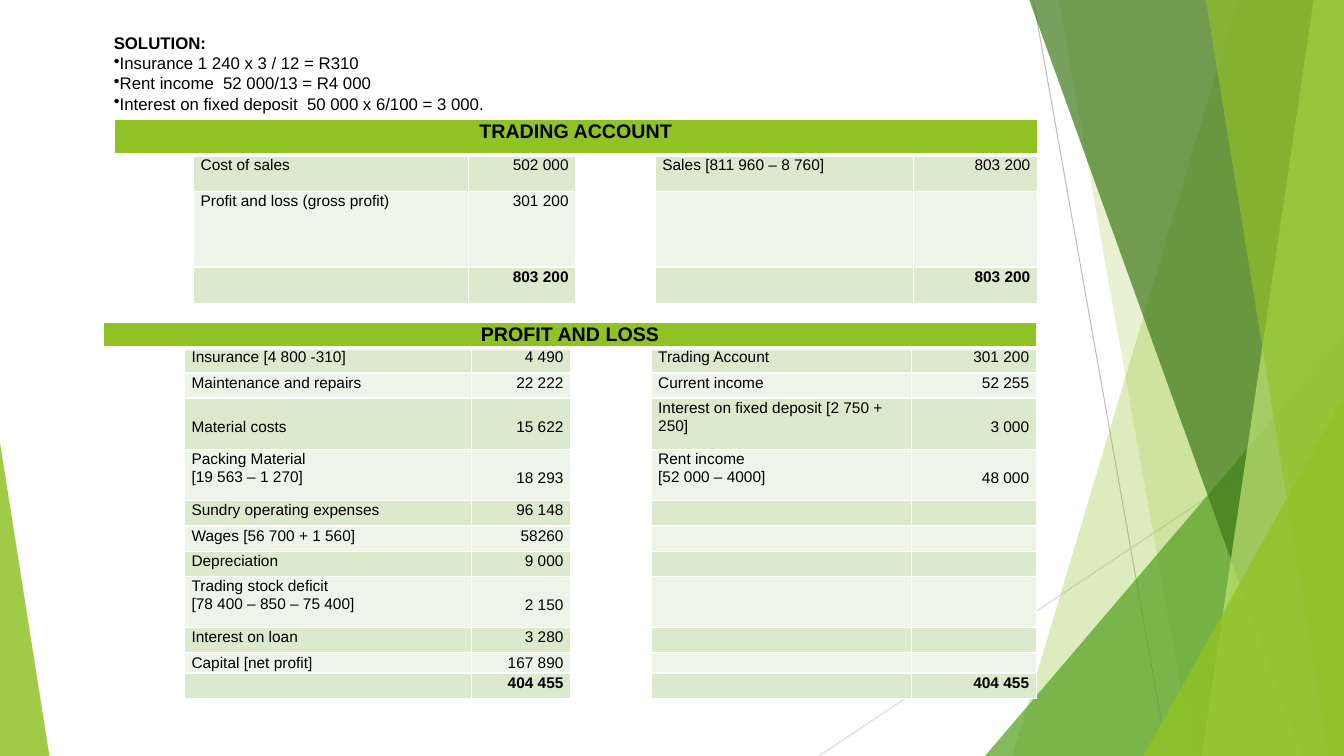
import pptx
import pptx.util
import pptx.dml.color
import pptx.enum.shapes
import pptx.enum.text
import pptx.oxml
import pptx.oxml.ns

WIDTH, HEIGHT = pptx.util.Inches(13.33), pptx.util.Inches(7.5)
FONT = "Arial"
COLOURS = {
    "text": "000000", "border": "FFFFFF", "header": "90C226",
    "band": "DBE9CD", "pale band": "EEF4E8",
    "grey": "BFBFBF", "light grey": "D9D9D9",
    "lime": "90C226", "green": "54A021", "forest": "3F7819", "light lime": "C0E474",
}
LINE = 3.33      # height of a one-line row, percent of the slide
DOUBLE = 6.8     # height of a two-line row
LINE_DROP = pptx.util.Pt(13.5)

NOTES = ["Insurance 1 240 x 3 / 12 = R310",
         "Rent income  52 000/13 = R4 000",
         "Interest on fixed deposit  50 000 x 6/100 = 3 000."]

# Each entry: row height, debit item, debit amount, credit item, credit amount
TRADING = [
    (4.8, "Cost of sales", "502 000", "Sales [811 960 – 8 760]", "803 200"),
    (10, "Profit and loss (gross profit)", "301 200", "", ""),
    (4.8, "", "803 200", "", "803 200"),
]
PROFIT_AND_LOSS = [
    (LINE, "Insurance [4 800 -310]", "4 490", "Trading Account", "301 200"),
    (LINE, "Maintenance and repairs", "22 222", "Current income", "52 255"),
    (DOUBLE, "Material costs", "15 622", "Interest on fixed deposit [2 750 + 250]", "3 000"),
    (DOUBLE, "Packing Material\n[19 563 – 1 270]", "18 293",
     "Rent income\n[52 000 – 4000]", "48 000"),
    (LINE, "Sundry operating expenses", "96 148", "", ""),
    (LINE, "Wages [56 700 + 1 560]", "58260", "", ""),
    (LINE, "Depreciation", "9 000", "", ""),
    (DOUBLE, "Trading stock deficit\n[78 400 – 850 – 75 400]", "2 150", "", ""),
    (LINE, "Interest on loan", "3 280", "", ""),
    (2.67, "Capital [net profit]", "167 890", "", ""),
    (LINE, "", "404 455", "", "404 455"),
]


def across(percent):
    return round(WIDTH * percent / 100)


def down(percent):
    return round(HEIGHT * percent / 100)


def colour(name):
    return pptx.dml.color.RGBColor.from_string(COLOURS[name])


def add_child(parent, tag, **attributes):
    child = pptx.oxml.ns.qn(tag)
    element = parent.makeelement(child, attributes)
    parent.append(element)
    return element


def paint(shape, name, opacity):
    shape.shadow.inherit = False
    shape.line.fill.background()
    shape.fill.solid()
    shape.fill.fore_color.rgb = colour(name)
    tint = shape.fill._xPr.find(".//" + pptx.oxml.ns.qn("a:srgbClr"))
    add_child(tint, "a:alpha", val=str(opacity * 1000))


def add_hairline(slide, start, end, name):
    line = slide.shapes.add_connector(
        pptx.enum.shapes.MSO_CONNECTOR.STRAIGHT,
        across(start[0]), down(start[1]), across(end[0]), down(end[1]))
    line.line.color.rgb = colour(name)
    line.line.width = pptx.util.Pt(0.75)
    add_child(line._element.spPr, "a:effectLst")


def add_facet(slide, top, bottom, name, opacity):
    """Fill from a slanted left edge to the right side of the slide."""
    builder = slide.shapes.build_freeform(across(top), 0)
    builder.add_line_segments([(WIDTH, 0), (WIDTH, HEIGHT), (across(bottom), HEIGHT)])
    paint(builder.convert_to_shape(), name, opacity)


def add_corner(slide, left, top, width, peak, name, opacity):
    """Triangle standing on the bottom edge of the slide."""
    triangle = slide.shapes.add_shape(
        pptx.enum.shapes.MSO_SHAPE.ISOSCELES_TRIANGLE,
        across(left), down(top), across(width), down(100 - top))
    triangle.adjustments[0] = peak
    paint(triangle, name, opacity)


def style_paragraph(paragraph, size, bold):
    paragraph.font.name = FONT
    paragraph.font.size = pptx.util.Pt(size)
    paragraph.font.bold = bold
    paragraph.font.color.rgb = colour("text")


def add_border(cell, side, points):
    border = add_child(cell._tc.get_or_add_tcPr(), "a:ln" + side,
                       w=str(pptx.util.Pt(points)))
    add_child(add_child(border, "a:solidFill"), "a:srgbClr", val=COLOURS["border"])


def fill_cell(cell, text, fill, align, size=11, bold=False, drop=0, underline=1):
    cell.margin_left = cell.margin_right = pptx.util.Inches(0.07)
    cell.margin_top, cell.margin_bottom = drop, 0
    for side in "LRT":
        add_border(cell, side, 1)
    add_border(cell, "B", underline)
    if fill:
        cell.fill.solid()
        cell.fill.fore_color.rgb = colour(fill)
    else:
        cell.fill.background()
    cell.text = text
    for paragraph in cell.text_frame.paragraphs:
        paragraph.alignment = align
        paragraph.line_spacing = 1.07
        style_paragraph(paragraph, size, bold)
        if not text:
            add_child(paragraph._p, "a:endParaRPr", sz=str(size * 100))


def add_account(slide, title, left, top, columns, header_height, entries):
    alignment = pptx.enum.text.PP_ALIGN
    heights = [header_height] + [entry[0] for entry in entries]
    table = slide.shapes.add_table(
        len(heights), len(columns), across(left), down(top),
        across(sum(columns)), down(sum(heights))).table
    table.first_row = table.horz_banding = False
    for column, width in zip(table.columns, columns):
        column.width = across(width)
    for row, height in zip(table.rows, heights):
        row.height = down(height)

    header = table.cell(0, 0)
    header.merge(table.cell(0, len(columns) - 1))
    fill_cell(header, title, "header", alignment.CENTER, 14, True, underline=3)

    for row, (height, debit, paid, credit, received) in enumerate(entries, 1):
        band = "band" if row % 2 else "pale band"
        total = row == len(entries)
        for column, text in enumerate(["", debit, paid, "", credit, received]):
            is_gap, is_amount = column % 3 == 0, column % 3 == 2
            lowered = height == DOUBLE and (is_amount or text == "Material costs")
            fill_cell(table.cell(row, column), text, None if is_gap else band,
                      alignment.RIGHT if is_amount else alignment.LEFT,
                      bold=total, drop=LINE_DROP if lowered else 0)


def add_solution(slide):
    box = slide.shapes.add_textbox(across(7.73), down(3.6), across(67.37), down(12.13))
    frame = box.text_frame
    frame.word_wrap = True
    frame.vertical_anchor = pptx.enum.text.MSO_ANCHOR.MIDDLE
    frame.text = "\n".join(["SOLUTION:"] + NOTES)
    for index, paragraph in enumerate(frame.paragraphs):
        style_paragraph(paragraph, 12, index == 0)
        if index:
            properties = paragraph._p.get_or_add_pPr()
            properties.set("marL", "0")
            properties.set("indent", "0")
            bullet = properties.makeelement(pptx.oxml.ns.qn("a:buChar"), {"char": "•"})
            properties.insert(0, bullet)


def add_backdrop(slide):
    add_hairline(slide, (76.89, 0), (86.87, 100), "grey")
    add_hairline(slide, (100, 53.73), (60.92, 100), "light grey")
    add_facet(slide, 92.12, 75.32, "lime", 30)
    add_facet(slide, 78.77, 88.75, "lime", 20)
    add_corner(slide, 73.29, 44.4, 26.71, 1, "green", 72)
    add_facet(slide, 76.59, 96.85, "forest", 70)
    add_facet(slide, 97.75, 89.42, "light lime", 70)
    add_facet(slide, 89.72, 98.87, "lime", 65)
    add_corner(slide, 85.07, 52.4, 14.93, 1, "lime", 80)
    add_corner(slide, 0, 58.53, 3.68, 0, "lime", 85)


def main():
    presentation = pptx.Presentation()
    presentation.slide_width, presentation.slide_height = WIDTH, HEIGHT
    slide = presentation.slides.add_slide(presentation.slide_layouts[6])
    add_backdrop(slide)
    add_account(slide, "TRADING ACCOUNT", 8.48, 15.73,
                [5.93, 20.48, 7.95, 5.93, 19.2, 9.23], 4.8, TRADING)
    add_account(slide, "PROFIT AND LOSS", 7.73, 42.67,
                [6, 21.38, 7.35, 6, 19.35, 9.3], LINE, PROFIT_AND_LOSS)
    add_solution(slide)
    presentation.save("out.pptx")


if __name__ == "__main__":
    main()
